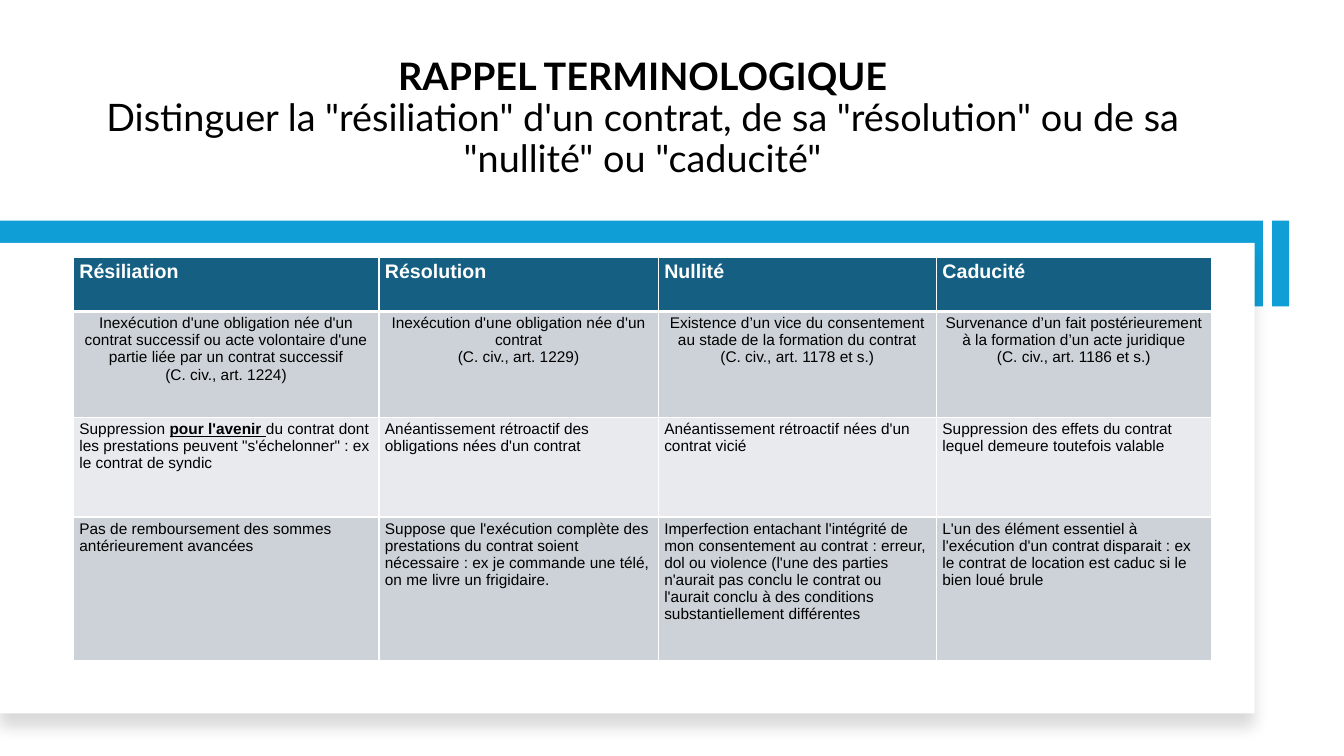
from dataclasses import dataclass

from lxml import etree
from pptx import Presentation
from pptx.dml.color import RGBColor
from pptx.enum.shapes import MSO_SHAPE
from pptx.enum.text import MSO_ANCHOR, PP_ALIGN
from pptx.oxml.ns import qn
from pptx.util import Cm, Pt

RECTANGLE = MSO_SHAPE.RECTANGLE
BOTTOM, TOP = MSO_ANCHOR.BOTTOM, MSO_ANCHOR.TOP
CENTER, LEFT = PP_ALIGN.CENTER, PP_ALIGN.LEFT

HEADING = "RAPPEL TERMINOLOGIQUE"
SUBHEADING = (
    "Distinguer la \"résiliation\" d'un contrat, de sa \"résolution\" "
    "ou de sa \"nullité\" ou \"caducité\""
)
EMPHASIS = "pour l'avenir "

TERMS = ["Résiliation", "Résolution", "Nullité", "Caducité"]
CAUSES = [
    "Inexécution d'une obligation née d'un contrat successif ou acte volontaire "
    "d'une partie liée par un contrat successif\n(C. civ., art. 1224)",
    "Inexécution d'une obligation née d'un contrat\n(C. civ., art. 1229)",
    "Existence d’un vice du consentement au stade de la formation du contrat\n"
    "(C. civ., art. 1178 et s.)",
    "Survenance d’un fait postérieurement à la formation d’un acte juridique\n"
    "(C. civ., art. 1186 et s.)",
]
EFFECTS = [
    "Suppression pour l'avenir du contrat dont les prestations peuvent "
    "\"s'échelonner\" : ex le contrat de syndic",
    "Anéantissement rétroactif des obligations nées d'un contrat",
    "Anéantissement rétroactif nées d'un contrat vicié",
    "Suppression des effets du contrat lequel demeure toutefois valable",
]
DETAILS = [
    "Pas de remboursement des sommes antérieurement avancées",
    "Suppose que l'exécution complète des prestations du contrat soient nécessaire : "
    "ex je commande une télé, on me livre un frigidaire.",
    "Imperfection entachant l'intégrité de mon consentement au contrat : erreur, dol "
    "ou violence (l'une des parties n'aurait pas conclu le contrat ou l'aurait conclu "
    "à des conditions substantiellement différentes",
    "L'un des élément essentiel à l'exécution d'un contrat disparait : ex le contrat "
    "de location est caduc si le bien loué brule",
]


@dataclass(frozen=True)
class Theme:
    title_font: str = "Lato"
    body_font: str = "Arial"
    title_size: int = 27
    header_size: int = 14
    body_size: int = 11
    accent: str = "0F9ED5"
    header: str = "156082"
    dark_band: str = "CCD2D8"
    light_band: str = "E8EAED"
    white: str = "FFFFFF"
    black: str = "000000"
    rule: int = 1
    header_rule: int = 3


THEME = Theme()
ROWS = [
    (TERMS, 1.37, THEME.header, LEFT),
    (CAUSES, 2.67, THEME.dark_band, CENTER),
    (EFFECTS, 2.51, THEME.light_band, LEFT),
    (DETAILS, 3.61, THEME.dark_band, LEFT),
]
COLUMN_WIDTHS = [7.7, 7.04, 7.01, 6.93]
TABLE_LEFT, TABLE_TOP = 1.85, 6.48
BAR_TOP, BAR_HEIGHT = 5.56, 2.16


def style_run(run, font, size, color, bold=False):
    run.font.name = font
    run.font.size = Pt(size)
    run.font.color.rgb = RGBColor.from_string(color)
    run.font.bold = bold


def add_block(slide, left, top, width, height, color):
    block = slide.shapes.add_shape(RECTANGLE, Cm(left), Cm(top), Cm(width), Cm(height))
    block.shadow.inherit = False
    block.fill.solid()
    block.fill.fore_color.rgb = RGBColor.from_string(color)
    block.line.fill.background()
    return block


def add_soft_shadow(block):
    effects = block._element.spPr.find(qn("a:effectLst"))
    shadow = etree.SubElement(
        effects, qn("a:outerShdw"), blurRad=str(Pt(11)), dist=str(Pt(10)),
        dir="5400000", algn="t", rotWithShape="0",
    )
    color = etree.SubElement(shadow, qn("a:srgbClr"), val=THEME.black)
    etree.SubElement(color, qn("a:alpha"), val="15000")


def add_title(slide):
    title = slide.shapes.add_textbox(Cm(2.21), Cm(1.07), Cm(27.97), Cm(3.61))
    frame = title.text_frame
    frame.word_wrap = True
    frame.vertical_anchor = BOTTOM
    paragraph = frame.paragraphs[0]
    paragraph.text = HEADING + "\v" + SUBHEADING
    paragraph.alignment = CENTER
    paragraph.line_spacing = 0.9
    for run in paragraph.runs:
        style_run(run, THEME.title_font, THEME.title_size, THEME.black, run.text == HEADING)


def set_borders(cell, top, bottom):
    properties = cell._tc.get_or_add_tcPr()
    widths = {"lnL": THEME.rule, "lnR": THEME.rule, "lnT": top, "lnB": bottom}
    for side, width in widths.items():
        line = etree.SubElement(properties, qn("a:" + side), w=str(Pt(width)))
        fill = etree.SubElement(line, qn("a:solidFill"))
        etree.SubElement(fill, qn("a:srgbClr"), val=THEME.white)


def write_paragraph(paragraph, text, alignment, is_header):
    before, emphasis, after = text.partition(EMPHASIS)
    paragraph.alignment = alignment
    size = THEME.header_size if is_header else THEME.body_size
    color = THEME.white if is_header else THEME.black
    for part in filter(None, (before, emphasis, after)):
        run = paragraph.add_run()
        run.text = part
        style_run(run, THEME.body_font, size, color, is_header or part == EMPHASIS)
        run.font.underline = part == EMPHASIS


def fill_cell(cell, text, color, alignment, row):
    cell.margin_left = cell.margin_right = Cm(0.15)
    cell.margin_top = cell.margin_bottom = Cm(0.08)
    cell.vertical_anchor = TOP
    set_borders(
        cell,
        THEME.header_rule if row == 1 else THEME.rule,
        THEME.header_rule if row == 0 else THEME.rule,
    )
    cell.fill.solid()
    cell.fill.fore_color.rgb = RGBColor.from_string(color)
    frame = cell.text_frame
    for index, line in enumerate(text.split("\n")):
        paragraph = frame.add_paragraph() if index else frame.paragraphs[0]
        write_paragraph(paragraph, line, alignment, row == 0)


def add_comparison(slide):
    height = sum(row[1] for row in ROWS)
    comparison = slide.shapes.add_table(
        len(ROWS), len(TERMS), Cm(TABLE_LEFT), Cm(TABLE_TOP),
        Cm(sum(COLUMN_WIDTHS)), Cm(height),
    ).table
    for column, width in zip(comparison.columns, COLUMN_WIDTHS):
        column.width = Cm(width)
    for row, (texts, row_height, color, alignment) in enumerate(ROWS):
        comparison.rows[row].height = Cm(row_height)
        for column, text in enumerate(texts):
            fill_cell(comparison.cell(row, column), text, color, alignment, row)


def main():
    deck = Presentation()
    deck.slide_width, deck.slide_height = Cm(33.87), Cm(19.05)
    slide = deck.slides.add_slide(deck.slide_layouts[6])
    add_title(slide)
    add_block(slide, 0, BAR_TOP, 31.83, BAR_HEIGHT, THEME.accent)
    add_soft_shadow(add_block(slide, 0, 6.12, 31.62, 11.86, THEME.white))
    add_block(slide, 32.06, BAR_TOP, 0.43, BAR_HEIGHT, THEME.accent)
    add_comparison(slide)
    deck.save("out.pptx")


if __name__ == "__main__":
    main()
